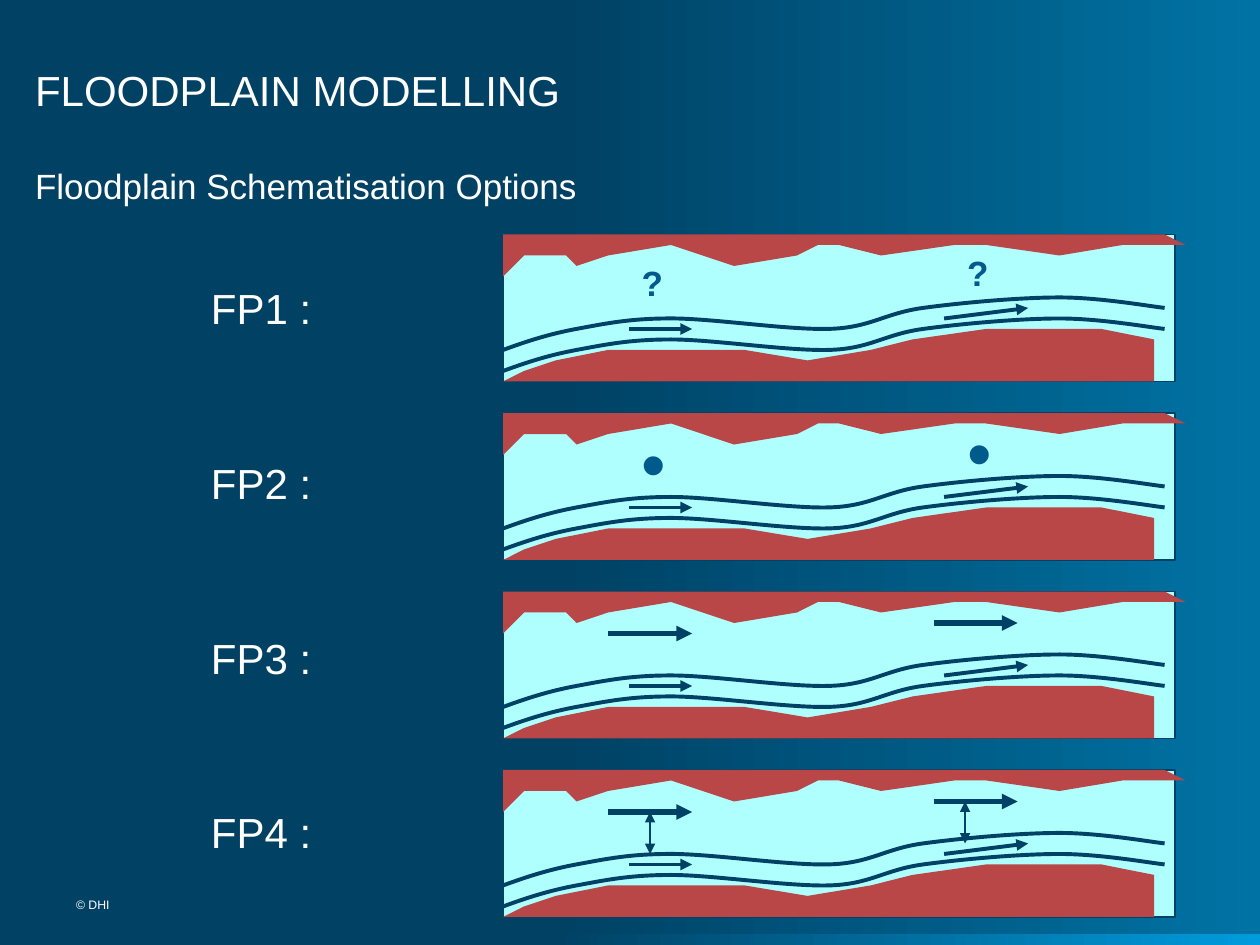
import pptx
import pptx.dml.color
import pptx.enum.shapes
import pptx.enum.text
import pptx.oxml.ns
import pptx.util
from lxml import etree

Pt = pptx.util.Pt
COLOURS = {
    "navy": "004165", "deep": "004164", "sea": "0073A4", "sky": "009BDC",
    "water": "AFFFFF", "land": "B94747", "mark": "005A8C", "white": "FFFFFF",
}
FONT = "Arial"

# Each panel is drawn on a grid of 6 pt cells, 64 wide and 14 high.
CELL = 6
PANEL_LEFT, PANEL_TOP, PANEL_PITCH = 287.5, 134, 102
PANEL_COLUMNS, PANEL_ROWS = 64, 14

UPPER_LAND = [
    (0, 4), (2, 2), (6, 2), (7, 3), (10, 2), (16, 1), (22, 3), (28, 2),
    (30, 1), (32, 1), (36, 2), (43, 1), (46, 1), (53, 2), (59, 1),
    (65, 1), (63, 0), (0, 0),
]
LOWER_LAND = [
    (62, 14), (62, 10), (57, 9), (46, 9), (39, 10), (35, 11), (29, 12),
    (23, 11), (10, 11), (5, 12), (2, 13), (0, 14),
]
# Start point, then two control points and an end point per curve.
RIVER_BANK = [
    (0, 11),
    (2.2, 10.2), (4.3, 9.5), (7, 9),
    (9.7, 8.5), (12, 8), (16, 8),
    (20, 8), (27, 9.1), (31, 9),
    (35, 8.9), (36.3, 7.5), (40, 7),
    (43.7, 6.5), (49.2, 6), (53, 6),
    (56.8, 6), (61.3, 6.8), (63, 7),
]
BANK_GAP = 2
CHANNEL_FLOWS = [((12, 9), (18, 9)), ((42, 8), (50, 7))]
PLAIN_FLOWS = [((10, 4), (18, 4)), ((41, 3), (49, 3))]
EXCHANGES = [((14, 4), (14, 8)), ((44, 3), (44, 7))]

OPTIONS = [
    {"name": "FP1 :", "mark": "?", "size": 20, "bold": True,
     "places": [(12, 2), (43, 1)]},
    {"name": "FP2 :", "mark": "•", "size": 40, "bold": False,
     "places": [(12, 0), (43, -1)]},
    {"name": "FP3 :", "plain_flows": PLAIN_FLOWS},
    {"name": "FP4 :", "plain_flows": PLAIN_FLOWS, "exchanges": EXCHANGES},
]


def rgb(name):
    return pptx.dml.color.RGBColor.from_string(COLOURS[name])


def set_gradient(fill, start, end):
    """Fill left to right; the start colour holds for the first 44 %."""
    fill.gradient()
    fill.gradient_angle = 0
    for stop, position, colour in zip(fill.gradient_stops, (0.44, 1), (start, end)):
        stop.position = position
        stop.color.rgb = rgb(colour)


class SlidePainter:
    def __init__(self, slide):
        self.slide = slide
        self.shapes = slide.shapes

    def rectangle(self, left, top, width, height):
        rectangle = self.shapes.add_shape(
            pptx.enum.shapes.MSO_SHAPE.RECTANGLE,
            Pt(left), Pt(top), Pt(width), Pt(height))
        rectangle.shadow.inherit = False
        return rectangle

    def text(self, box, lines, size, colour="white", bold=False, inset=(0, 0),
             gap=0, anchor=pptx.enum.text.MSO_ANCHOR.TOP):
        frame = self.shapes.add_textbox(*map(Pt, box)).text_frame
        frame.word_wrap = True
        frame.vertical_anchor = anchor
        frame.margin_left = frame.margin_right = Pt(inset[0])
        frame.margin_top = frame.margin_bottom = Pt(inset[1])
        for index, line in enumerate(lines):
            paragraph = frame.add_paragraph() if index else frame.paragraphs[0]
            if index:
                paragraph.space_before = Pt(gap)
            run = paragraph.add_run()
            run.text = line
            run.font.name = FONT
            run.font.size = Pt(size)
            run.font.bold = bold
            run.font.color.rgb = rgb(colour)

    def outline(self, points, closed):
        start, *others = [(Pt(x), Pt(y)) for x, y in points]
        builder = self.shapes.build_freeform(*start)
        builder.add_line_segments(others, close=closed)
        shape = builder.convert_to_shape()
        shape.shadow.inherit = False
        return shape

    def land(self, points):
        land = self.outline(points, closed=True)
        land.fill.solid()
        land.fill.fore_color.rgb = rgb("land")
        land.line.fill.background()

    def curve(self, points, width):
        """Draw Bezier curves: every three points after the first make one."""
        curve = self.outline(points, closed=False)
        curve.fill.background()
        curve.line.color.rgb = rgb("navy")
        curve.line.width = Pt(width)
        qn = pptx.oxml.ns.qn
        segments = list(curve.element.iter(qn("a:lnTo")))
        for first in range(0, len(segments), 3):
            bezier = etree.SubElement(segments[first].getparent(), qn("a:cubicBezTo"))
            for segment in segments[first:first + 3]:
                bezier.append(segment[0])
                segment.getparent().remove(segment)

    def arrow(self, start, end, width, both_ends=False):
        arrow = self.shapes.add_connector(
            pptx.enum.shapes.MSO_CONNECTOR.STRAIGHT, *map(Pt, (*start, *end)))
        arrow.line.color.rgb = rgb("navy")
        arrow.line.width = Pt(width)
        qn = pptx.oxml.ns.qn
        line = arrow.line._get_or_add_ln()
        for tip in ["a:headEnd", "a:tailEnd"] if both_ends else ["a:tailEnd"]:
            etree.SubElement(line, qn(tip), type="triangle")
        etree.SubElement(arrow.element.spPr, qn("a:effectLst"))


def draw_panel(painter, top, option):
    def place(point, down=0):
        return PANEL_LEFT + point[0] * CELL, top + (point[1] + down) * CELL

    water = painter.rectangle(
        PANEL_LEFT, top, PANEL_COLUMNS * CELL, PANEL_ROWS * CELL)
    water.fill.solid()
    water.fill.fore_color.rgb = rgb("water")
    water.line.color.rgb = rgb("navy")
    water.line.width = Pt(1)

    for down in (0, BANK_GAP):
        painter.curve([place(point, down) for point in RIVER_BANK], 2.25)
    for land in (UPPER_LAND, LOWER_LAND):
        painter.land([place(point) for point in land])

    for point in option.get("places", []):
        painter.text((*place(point), 24, option["size"] * 1.15 + 8),
                     [option["mark"]], option["size"], "mark",
                     option["bold"], inset=(7.2, 3.6))
    for start, end in option.get("plain_flows", []):
        painter.arrow(place(start), place(end), 3)
    for start, end in option.get("exchanges", []):
        painter.arrow(place(start), place(end), 1.5, both_ends=True)
    for start, end in CHANNEL_FLOWS:
        painter.arrow(place(start), place(end), 2.25)


def main():
    presentation = pptx.Presentation()
    presentation.slide_width, presentation.slide_height = Pt(720), Pt(540)
    slide = presentation.slides.add_slide(presentation.slide_layouts[6])
    set_gradient(slide.background.fill, "deep", "sea")
    painter = SlidePainter(slide)

    footer_bar = painter.rectangle(0, 534, 720, 6)
    set_gradient(footer_bar.fill, "deep", "sky")
    footer_bar.line.fill.background()

    painter.text((20, 18, 619, 47.5), ["FLOODPLAIN MODELLING"], 24,
                 anchor=pptx.enum.text.MSO_ANCHOR.BOTTOM)
    painter.text((20, 94, 680, 403), ["Floodplain Schematisation Options"], 20)
    painter.text((113.5, 158, 78, 342), [option["name"] for option in OPTIONS],
                 24, inset=(7.2, 3.6), gap=71)
    for index, option in enumerate(OPTIONS):
        draw_panel(painter, PANEL_TOP + index * PANEL_PITCH, option)
    painter.text((43.5, 513, 112, 14), ["© DHI"], 7)

    presentation.save("out.pptx")


if __name__ == "__main__":
    main()
